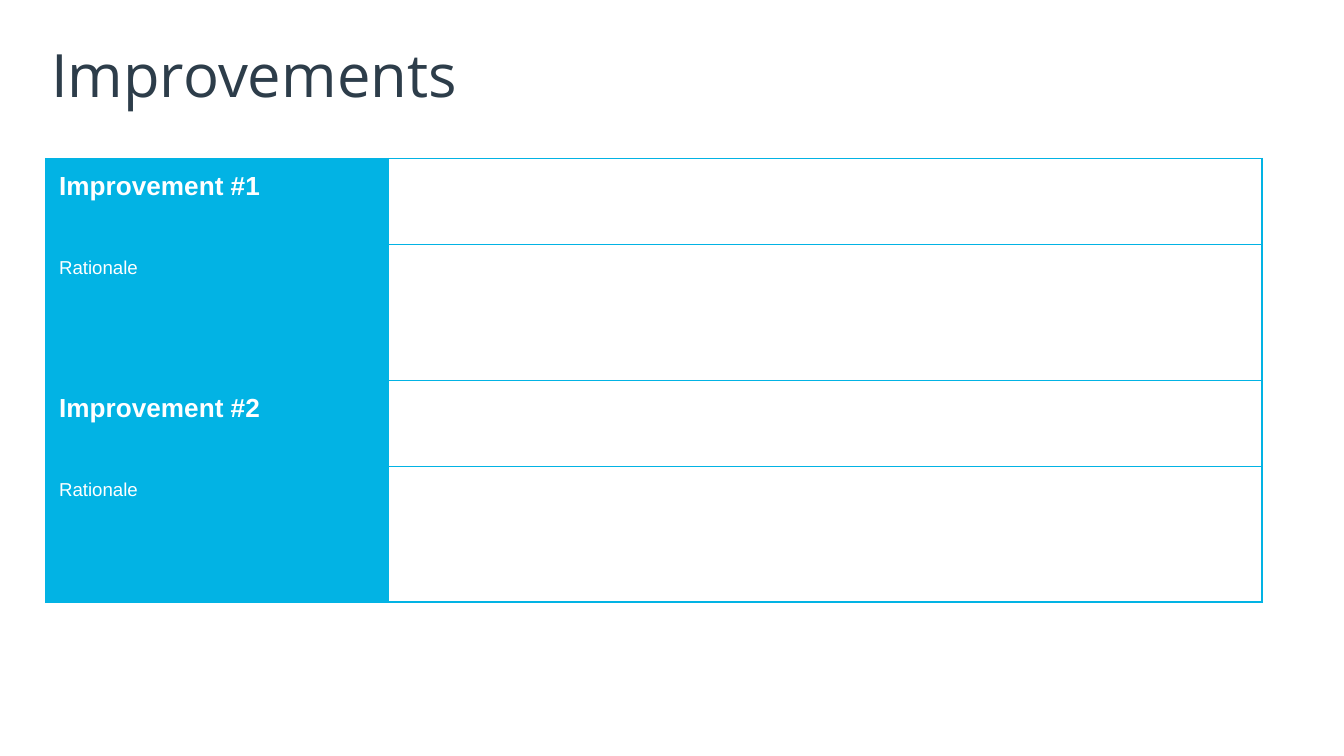
from typing import NamedTuple

from lxml import etree
from pptx import Presentation
from pptx.dml.color import RGBColor
from pptx.enum import text
from pptx.oxml import ns
from pptx.util import Inches, Pt

COLORS = {"cyan": "02B3E4", "slate": "2D3D4A", "white": "FFFFFF"}
SLIDE_WIDTH = 10
SLIDE_HEIGHT = SLIDE_WIDTH * 9 / 16
COLUMN_WIDTHS = (2.55, 6.5)
BORDER_WIDTH = Pt(0.75)


class Row(NamedTuple):
    label: str
    height: float
    size: int
    bold: bool


ROWS = [
    row
    for number in (1, 2)
    for row in (
        Row(f"Improvement #{number}", 0.64, 14, True),
        Row("Rationale", 1.01, 10, False),
    )
]


def color(name: str) -> RGBColor:
    return RGBColor.from_string(COLORS[name])


def style_font(font, name: str, size: int, color_name: str, bold: bool = False) -> None:
    font.name, font.size, font.bold = name, Pt(size), bold
    font.color.rgb = color(color_name)


def add_borders(cell) -> None:
    """Outline a cell; call before filling, as borders precede the fill in XML."""
    tc_pr = cell._tc.get_or_add_tcPr()
    for side in ("lnL", "lnR", "lnT", "lnB"):
        ln = etree.SubElement(tc_pr, ns.qn(f"a:{side}"), w=str(int(BORDER_WIDTH)))
        fill = etree.SubElement(ln, ns.qn("a:solidFill"))
        etree.SubElement(fill, ns.qn("a:srgbClr"), val=COLORS["cyan"])


def add_title(s, title: str) -> None:
    sp = s.shapes.add_textbox(Inches(0.34), Inches(0.23), Inches(9.32), Inches(0.63))
    tf = sp.text_frame
    tf.word_wrap = True
    tf.vertical_anchor = text.MSO_ANCHOR.MIDDLE
    tf.margin_left = tf.margin_right = tf.margin_top = tf.margin_bottom = Inches(0.04)
    p = tf.paragraphs[0]
    p.text = title
    style_font(p.font, "Open Sans", 32, "slate")


def add_improvements(s, rows: list[Row]) -> None:
    table = s.shapes.add_table(
        len(rows), len(COLUMN_WIDTHS), Inches(0.34), Inches(1.18),
        Inches(sum(COLUMN_WIDTHS)), Inches(sum(row.height for row in rows)),
    ).table
    table.first_row = table.horz_banding = False
    for column, width in zip(table.columns, COLUMN_WIDTHS):
        column.width = Inches(width)
    for i, row in enumerate(rows):
        table.rows[i].height = Inches(row.height)
        label, blank = (table.cell(i, j) for j in range(len(COLUMN_WIDTHS)))
        for cell in (label, blank):
            cell.margin_left = cell.margin_right = Inches(0.1)
            cell.margin_top = cell.margin_bottom = Inches(0.1)
            add_borders(cell)
        label.fill.solid()
        label.fill.fore_color.rgb = color("cyan")
        blank.fill.background()
        p = label.text_frame.paragraphs[0]
        p.text = row.label
        style_font(p.font, "Arial", row.size, "white", row.bold)


def main() -> None:
    prs = Presentation()
    prs.slide_width, prs.slide_height = Inches(SLIDE_WIDTH), Inches(SLIDE_HEIGHT)
    s = prs.slides.add_slide(prs.slide_layouts[6])
    add_title(s, "Improvements")
    add_improvements(s, ROWS)
    prs.save("out.pptx")


if __name__ == "__main__":
    main()
